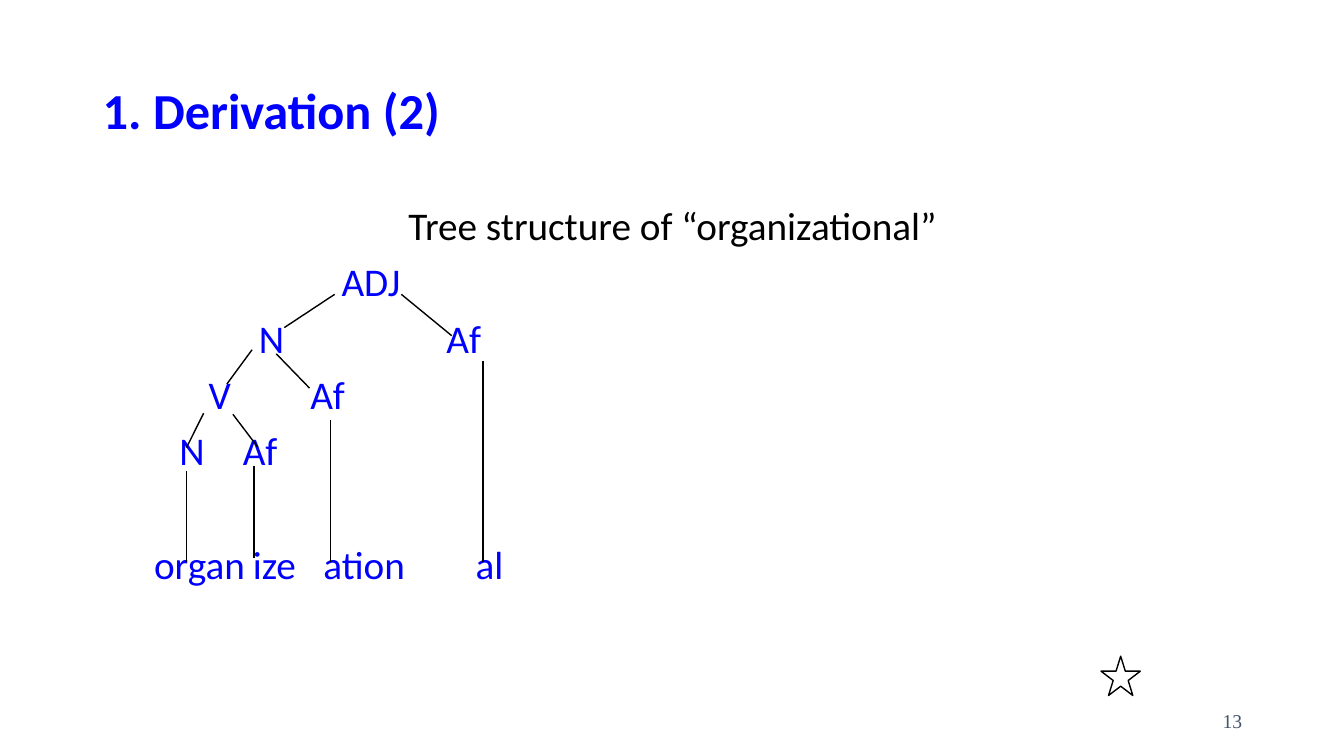
from dataclasses import dataclass

from lxml import etree
from pptx import Presentation
from pptx import util as u
from pptx.dml.color import RGBColor
from pptx.enum import shapes, text
from pptx.oxml.ns import qn


@dataclass(frozen=True)
class Theme:
    accent: str = "0000FF"
    ink: str = "000000"
    paper: str = "FFFFFF"
    muted: str = "44546A"
    font: str = "Calibri"
    number_font: str = "Times New Roman"
    title_size: int = 36
    body_size: int = 28
    number_size: int = 14
    line_width: int = 1
    line_spacing: float = 0.9
    paragraph_gap: float = 10


class TreeSlide:
    def __init__(self, slide, theme):
        self.slide = slide
        self.theme = theme

    def text_frame(self, left, top, width, height, anchor=text.MSO_ANCHOR.TOP):
        box = self.slide.shapes.add_textbox(
            u.Inches(left), u.Inches(top), u.Inches(width), u.Inches(height))
        frame = box.text_frame
        frame.word_wrap = True
        frame.vertical_anchor = anchor
        return frame

    def add_words(self, paragraph, words, size, color, font=None, bold=False,
                  align=text.PP_ALIGN.LEFT):
        paragraph.alignment = align
        run = paragraph.add_run()
        run.text = words
        run.font.size = u.Pt(size)
        run.font.name = font or self.theme.font
        run.font.bold = bold
        run.font.color.rgb = RGBColor.from_string(color)

    def level(self, frame, nodes, gap):
        """Add one tree level; nodes are (offset from the text edge, label)."""
        paragraph = frame.add_paragraph()
        paragraph.line_spacing = self.theme.line_spacing
        paragraph.space_before = u.Pt(gap)
        stops = etree.SubElement(paragraph._p.get_or_add_pPr(), qn("a:tabLst"))
        for offset, _ in nodes:
            etree.SubElement(stops, qn("a:tab"),
                             pos=str(u.Inches(offset)), algn="l")
        labels = "".join("\t" + label for _, label in nodes)
        self.add_words(paragraph, labels, self.theme.body_size,
                       self.theme.accent)

    def branch(self, x1, y1, x2, y2):
        line = self.slide.shapes.add_connector(
            shapes.MSO_CONNECTOR.STRAIGHT,
            u.Inches(x1), u.Inches(y1), u.Inches(x2), u.Inches(y2))
        line.line.color.rgb = RGBColor.from_string(self.theme.ink)
        line.line.width = u.Pt(self.theme.line_width)
        etree.SubElement(line._element.spPr, qn("a:effectLst"))

    def star(self, left, top, size):
        star = self.slide.shapes.add_shape(
            shapes.MSO_SHAPE.STAR_5_POINT,
            u.Inches(left), u.Inches(top), u.Inches(size), u.Inches(size))
        star.shadow.inherit = False
        star.fill.solid()
        star.fill.fore_color.rgb = RGBColor.from_string(self.theme.paper)
        star.line.color.rgb = RGBColor.from_string(self.theme.ink)
        star.line.width = u.Pt(self.theme.line_width)


LEVELS = [
    [(2.37, "ADJ")],
    [(1.55, "N"), (3.41, "Af")],
    [(1.05, "V"), (2.06, "Af")],
    [(0.76, "N"), (1.39, "Af")],
]
MORPHEMES = [(0.51, "organ"), (1.49, "ize"), (2.19, "ation"), (3.7, "al")]

BRANCHES = [
    (3.32, 2.92, 2.82, 3.25),
    (3.98, 2.92, 4.48, 3.33),
    (2.5, 3.47, 2.25, 3.81),
    (2.74, 3.51, 3.07, 3.85),
    (2.02, 4.1, 1.85, 4.44),
    (2.31, 4.11, 2.56, 4.44),
]
# x, top and bottom of the stems down to the morphemes
STEMS = [(1.85, 4.67, 5.58), (2.52, 4.62, 5.54),
         (3.28, 4.17, 5.58), (4.79, 3.58, 5.58)]


def main():
    deck = Presentation()
    deck.slide_width = u.Inches(13.33)
    deck.slide_height = u.Inches(7.5)
    theme = Theme()
    page = TreeSlide(deck.slides.add_slide(deck.slide_layouts[6]), theme)

    number = page.text_frame(9.42, 6.95, 3, 0.4, text.MSO_ANCHOR.MIDDLE)
    page.add_words(number.paragraphs[0], "13", theme.number_size, theme.muted,
                   font=theme.number_font, align=text.PP_ALIGN.RIGHT)

    title = page.text_frame(0.92, 0.4, 11.5, 1.45, text.MSO_ANCHOR.MIDDLE)
    title.paragraphs[0].line_spacing = theme.line_spacing
    page.add_words(title.paragraphs[0], "1. Derivation (2)", theme.title_size,
                   theme.accent, bold=True)

    tree = page.text_frame(0.92, 2, 11.5, 4.76)
    tree.paragraphs[0].line_spacing = theme.line_spacing
    page.add_words(tree.paragraphs[0], "Tree structure of “organizational”",
                   theme.body_size, theme.ink, align=text.PP_ALIGN.CENTER)
    for nodes in LEVELS:
        page.level(tree, nodes, theme.paragraph_gap)
    # The morphemes stand one level lower, so the stems have room
    level_height = 1.22 * theme.body_size * theme.line_spacing + theme.paragraph_gap
    page.level(tree, MORPHEMES, theme.paragraph_gap + level_height)

    for ends in BRANCHES:
        page.branch(*ends)
    for x, top, bottom in STEMS:
        page.branch(x, top, x, bottom)

    page.star(10.92, 6.51, 0.39)
    deck.save("out.pptx")


if __name__ == "__main__":
    main()
